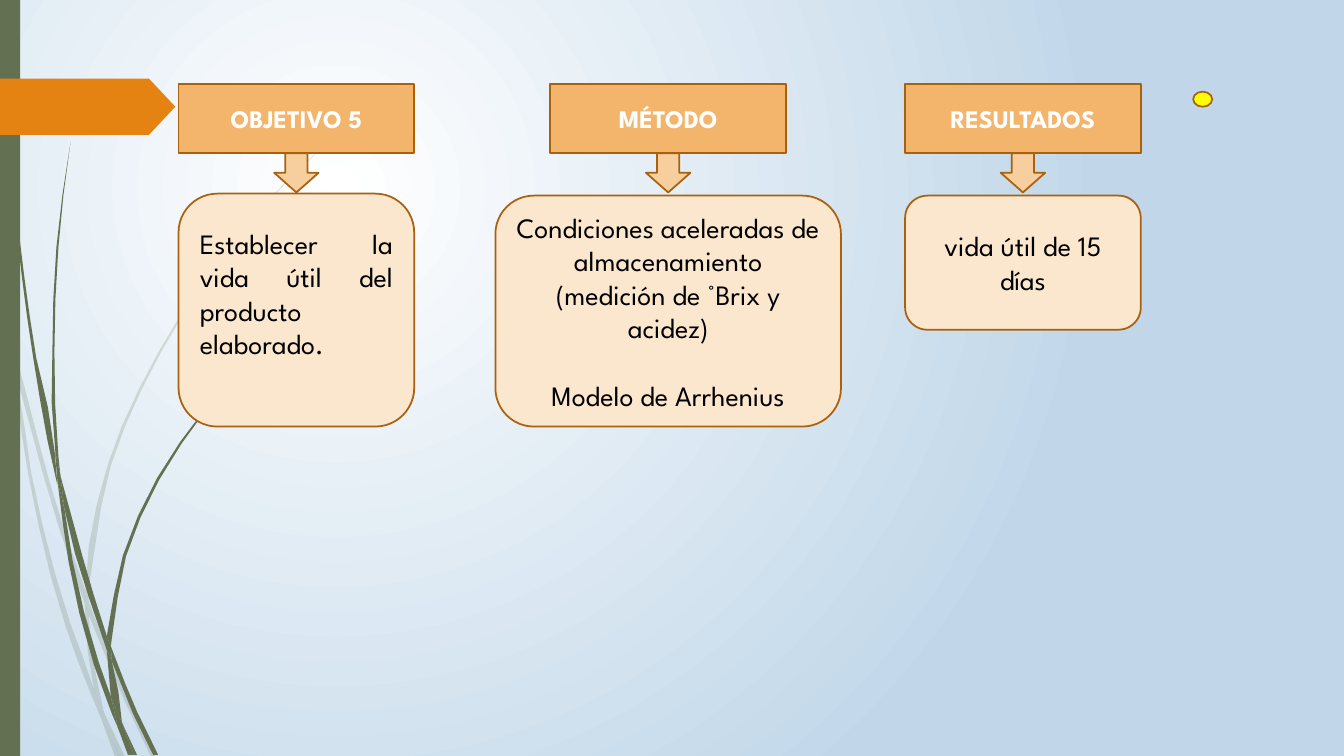
from dataclasses import dataclass
from itertools import pairwise
from math import ceil, dist

from lxml.etree import SubElement
from pptx import Presentation
from pptx.dml.color import RGBColor
from pptx.enum.shapes import MSO_SHAPE
from pptx.enum.text import MSO_ANCHOR, PP_ALIGN
from pptx.oxml.ns import qn
from pptx.shapes.autoshape import Shape
from pptx.slide import Slide
from pptx.util import Cm, Pt

COLOURS = {
    "glow": "FFFFFF", "sky": "C1D7E9", "stem": "637052", "tag": "E48312",
    "header": "F3B56C", "arrow": "F7CE9D", "panel": "FBE6CE", "edge": "A9610D",
    "dot": "FFFF00", "white": "FFFFFF", "black": "000000",
}
FONT = "League Spartan"
GRID = Cm(0.0254)
CHORD = 60
HEADER_TOP, HEADER_WIDTH, HEADER_HEIGHT = 2.11, 5.94, 1.75
ARROW_WIDTH, ARROW_HEIGHT = 1.12, 0.99
HEADER_FORMAT = {"name": FONT, "size": Pt(18), "bold": True}
PANEL_FORMAT = {"name": FONT, "size": Pt(20), "bold": False}

Point = tuple[float, float]
Edge = list[Point]


@dataclass
class Column:
    title: str
    center: float
    panel_top: float
    panel_width: float
    panel_height: float
    texts: list[str]
    align: PP_ALIGN = PP_ALIGN.CENTER
    bottom_inset: float = 0.13


COLUMNS = [
    Column("OBJETIVO 5", 7.47, 4.88, 5.94, 5.87,
           ["Establecer la vida útil del producto elaborado."], PP_ALIGN.JUSTIFY, 0.97),
    Column("MÉTODO", 16.84, 4.93, 8.71, 5.82,
           ["Condiciones aceleradas de almacenamiento (medición de °Brix y acidez)",
            "Modelo de Arrhenius"]),
    Column("RESULTADOS", 25.78, 4.93, 5.94, 3.38, ["vida útil de 15 días"]),
]

PALE_STEMS: list[list[Edge]] = [
    [[(11, 350), (9, 322), (0, 282)], [(0, 299), (10, 344), (11, 350)]],
    [[(17, 376), (58, 522), (84, 599)], [(85, 586), (62, 520), (14, 345)]],
    [[(88, 610), (123, 694), (150, 751)], [(155, 751), (127, 692), (92, 607), (88, 596)]],
    [[(105, 711), (119, 751)], [(124, 751), (105, 711)]],
    [[(11, 350), (28, 470), (65, 621), (92, 693), (101, 714)],
     [(99, 707), (93, 683), (70, 619), (31, 469), (17, 376), (11, 350)]],
    [[(84, 599), (87, 646), (93, 683), (96, 692), (105, 711)],
     [(103, 706), (91, 646), (88, 610), (88, 608), (84, 599)]],
    [[(88, 584), (110, 462), (160, 349), (229, 245), (268, 198), (290, 175), (312, 154)],
     [(312, 153), (289, 175), (268, 197), (228, 244), (158, 348), (107, 461), (85, 584),
      (85, 586)],
     [(88, 596), (88, 584)]],
    [[(101, 714), (114, 751)], [(119, 751), (101, 714)]],
    [[(84, 599), (88, 608), (88, 610)], [(88, 596), (85, 586)]],
    [[(93, 683), (99, 707), (101, 714), (119, 751)],
     [(119, 751), (105, 711), (96, 692), (93, 683)]],
]
DARK_STEMS: list[list[Edge]] = [
    [[(3, 0), (4, 48), (7, 110), (17, 233), (33, 355), (56, 477), (57, 481)],
     [(55, 457), (55, 453), (36, 355), (19, 232), (8, 109), (5, 48), (4, 0)]],
    [[(60, 472), (64, 505), (88, 592), (106, 645)],
     [(106, 633), (106, 631), (93, 590), (60, 472)]],
    [[(110, 641), (111, 656), (132, 708), (152, 749)],
     [(157, 749), (136, 706), (113, 649), (110, 641)]],
    [[(57, 477), (68, 557), (93, 659), (111, 708), (117, 722)],
     [(116, 717), (110, 691), (98, 657), (72, 556), (64, 505), (57, 477)]],
    [[(60, 472), (58, 453), (54, 349), (58, 245), (63, 193), (70, 141)],
     [(70, 141), (62, 193), (56, 245), (52, 349), (55, 449), (60, 472)]],
    [[(122, 719), (133, 749)], [(136, 749), (122, 719)]],
    [[(55, 449), (55, 453), (57, 477), (64, 505)], [(60, 472), (55, 449)]],
    [[(111, 633), (125, 552), (158, 476), (205, 406), (231, 374), (245, 359), (261, 344)],
     [(260, 344), (245, 358), (231, 373), (204, 405), (156, 474), (122, 551), (106, 631)],
     [(110, 641), (111, 633)]],
    [[(117, 722), (127, 749)], [(131, 749), (117, 722)]],
    [[(106, 645), (110, 691), (116, 706), (122, 719)],
     [(121, 716), (111, 656), (109, 651), (106, 645)]],
    [[(106, 645), (109, 651), (111, 656)], [(110, 641), (106, 631)]],
    [[(110, 691), (116, 717), (117, 722), (130, 749)],
     [(133, 749), (122, 719), (116, 706), (110, 691)]],
]


def smooth(edge: Edge) -> Edge:
    spans = [dist(a, b) for a, b in pairwise(edge)]
    slopes = [((b[0] - a[0]) / h, (b[1] - a[1]) / h)
              for (a, b), h in zip(pairwise(edge), spans)]
    inner = [tuple((h1 * u + h0 * v) / (h0 + h1) for u, v in zip(s0, s1))
             for (h0, h1), (s0, s1) in zip(pairwise(spans), pairwise(slopes))]
    tangents = [slopes[0], *inner, slopes[-1]]
    points = [edge[0]]
    for (a, b), (m, n), h in zip(pairwise(edge), pairwise(tangents), spans):
        steps = ceil(h / CHORD)
        for step in range(1, steps + 1):
            t = step / steps
            rise = t * t * (3 - 2 * t)
            leave, arrive = h * t * (1 - t) ** 2, h * t * t * (t - 1)
            points.append(tuple(a[i] + (b[i] - a[i]) * rise + m[i] * leave + n[i] * arrive
                                for i in (0, 1)))
    return points


def paint(shape: Shape, fill: str, line: str | None = None) -> None:
    shape.shadow.inherit = False
    shape.fill.solid()
    shape.fill.fore_color.rgb = RGBColor.from_string(COLOURS[fill])
    if line is None:
        shape.line.fill.background()
    else:
        shape.line.color.rgb = RGBColor.from_string(COLOURS[line])
        shape.line.width = Pt(1.25)


def draw_stem(page: Slide, edges: list[Edge], opacity: int) -> None:
    points = [(x * GRID, y * GRID) for edge in edges for x, y in smooth(edge)]
    builder = page.shapes.build_freeform(*points[0], scale=1.0)
    builder.add_line_segments(points[1:], close=True)
    stem = builder.convert_to_shape()
    paint(stem, "stem")
    if opacity < 100:
        colour = stem.element.spPr.find(qn("a:solidFill"))[0]
        SubElement(colour, qn("a:alpha"), val=str(opacity * 1000))


def draw_shape(page: Slide, kind: MSO_SHAPE, left: float, top: float, width: float,
               height: float, fill: str, line: str | None = None) -> Shape:
    shape = page.shapes.add_shape(kind, Cm(left), Cm(top), Cm(width), Cm(height))
    paint(shape, fill, line)
    return shape


def write(box: Shape, texts: list[str], formats: dict, colour: str,
          align: PP_ALIGN = PP_ALIGN.CENTER) -> None:
    frame = box.text_frame
    frame.word_wrap = True
    frame.vertical_anchor = MSO_ANCHOR.MIDDLE
    for index, text in enumerate(texts):
        para = frame.add_paragraph() if index else frame.paragraphs[0]
        para.alignment = align
        if index:
            para.space_before = Pt(24)
        span = para.add_run()
        span.text = text
        for name, value in formats.items():
            setattr(span.font, name, value)
        span.font.color.rgb = RGBColor.from_string(COLOURS[colour])


def draw_column(page: Slide, column: Column) -> None:
    header = draw_shape(page, MSO_SHAPE.RECTANGLE, column.center - HEADER_WIDTH / 2,
                        HEADER_TOP, HEADER_WIDTH, HEADER_HEIGHT, "header", "edge")
    write(header, [column.title], HEADER_FORMAT, "white")
    draw_shape(page, MSO_SHAPE.DOWN_ARROW, column.center - ARROW_WIDTH / 2,
               HEADER_TOP + HEADER_HEIGHT, ARROW_WIDTH, ARROW_HEIGHT, "arrow", "edge")
    panel = draw_shape(page, MSO_SHAPE.ROUNDED_RECTANGLE,
                       column.center - column.panel_width / 2, column.panel_top,
                       column.panel_width, column.panel_height, "panel", "edge")
    panel.text_frame.margin_bottom = Cm(column.bottom_inset)
    write(panel, column.texts, PANEL_FORMAT, "black", column.align)


def fill_background(page: Slide) -> None:
    fill = page.background.fill
    fill.gradient()
    for stop, position, name in zip(fill.gradient_stops, (0, 1), ("glow", "sky")):
        stop.position = position
        stop.color.rgb = RGBColor.from_string(COLOURS[name])
    gradient = page.element.find(f".//{qn('a:gradFill')}")
    gradient.remove(gradient.find(qn("a:lin")))
    circle = SubElement(gradient, qn("a:path"), path="circle")
    SubElement(circle, qn("a:fillToRect"), l="50000", t="50000", r="100000", b="100000")


def main() -> None:
    deck = Presentation()
    deck.slide_width, deck.slide_height = Cm(33.87), Cm(19.05)
    page = deck.slides.add_slide(deck.slide_layouts[6])
    fill_background(page)
    for stems, opacity in ((PALE_STEMS, 20), (DARK_STEMS, 100)):
        for edges in stems:
            draw_stem(page, edges, opacity)
    draw_shape(page, MSO_SHAPE.RECTANGLE, 0, 0, 0.51, 19.05, "stem")
    tag = draw_shape(page, MSO_SHAPE.PENTAGON, 0, 1.98, 4.42, 1.42, "tag")
    tag.adjustments[0] = 0.47
    for column in COLUMNS:
        draw_column(page, column)
    draw_shape(page, MSO_SHAPE.OVAL, 30.07, 2.31, 0.48, 0.38, "dot", "edge")
    deck.save("out.pptx")


if __name__ == "__main__":
    main()
